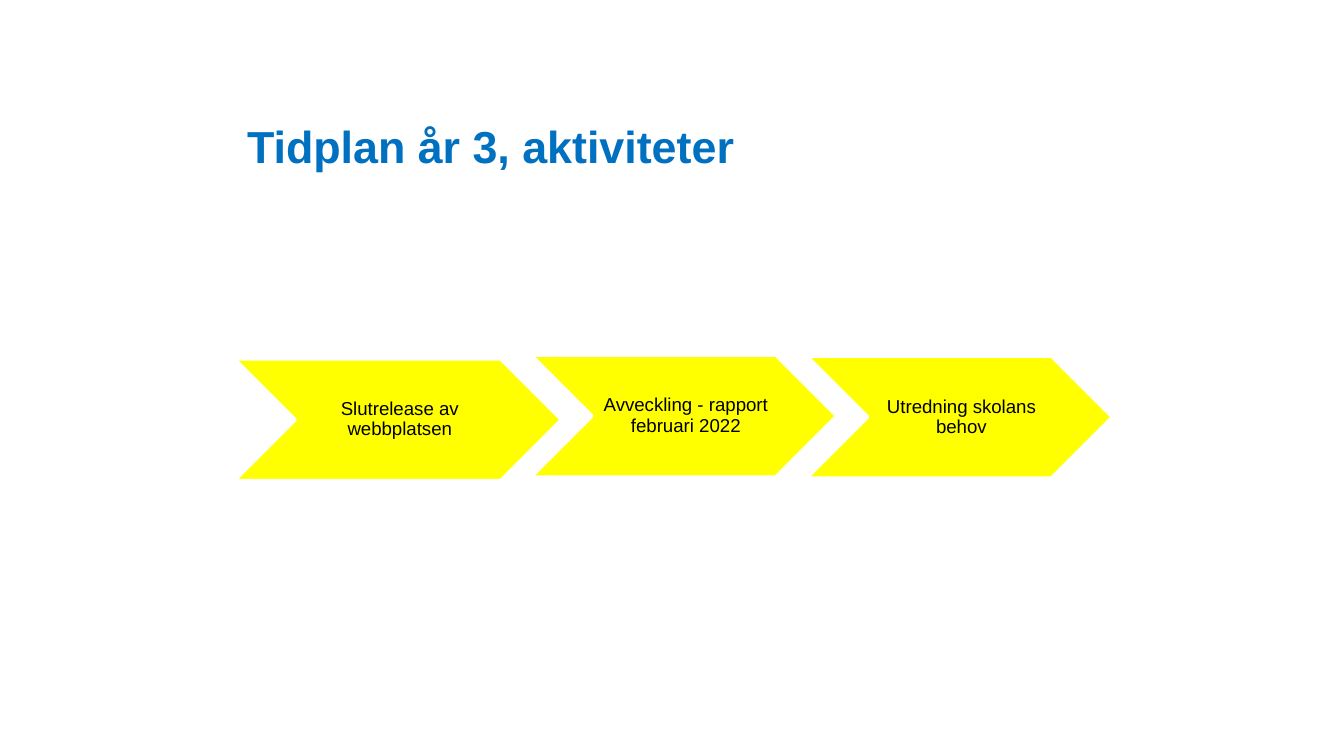
"""Build the timeline slide for year three with its chevron activities."""
from dataclasses import dataclass
from typing import Any

from pptx import Presentation
from pptx.dml.color import RGBColor
from pptx.enum.shapes import MSO_SHAPE
from pptx.enum.text import MSO_ANCHOR, PP_ALIGN
from pptx.util import Cm, Pt

CHEVRON = MSO_SHAPE.CHEVRON
MIDDLE, BOTTOM = MSO_ANCHOR.MIDDLE, MSO_ANCHOR.BOTTOM
CENTER, LEFT = PP_ALIGN.CENTER, PP_ALIGN.LEFT

COLOURS = {"title": "0070C0", "activity": "FFFF00", "outline": "FFFFFF", "text": "000000"}
ROW_HEIGHT = Cm(2.31)
TITLE_FONT = {"name": "Arial", "size": Pt(24), "bold": True}
ACTIVITY_FONT = {"name": "Arial", "size": Pt(10), "bold": False}
TITLE_FRAME = {"word_wrap": True, "vertical_anchor": BOTTOM}
ACTIVITY_FRAME = {
    "word_wrap": True,
    "vertical_anchor": MIDDLE,
    "margin_left": Cm(0.1),
    "margin_top": Cm(0.03),
    "margin_right": Cm(0.03),
    "margin_bottom": Cm(0.03),
}
TITLE_PARAGRAPH = {"alignment": LEFT}
ACTIVITY_PARAGRAPH = {"alignment": CENTER, "line_spacing": 0.9}


@dataclass(frozen=True)
class Activity:
    """A chevron step, with lengths in centimetres."""

    text: str
    left: float
    top: float
    width: float


ACTIVITIES = (
    Activity("Slutrelease av webbplatsen", 4.42, 6.78, 6.2),
    Activity("Avveckling - rapport februari 2022", 10.03, 6.71, 5.79),
    Activity("Utredning skolans behov", 15.24, 6.73, 5.79),
)


def colour(name: str) -> RGBColor:
    """Return the named colour."""
    return RGBColor.from_string(COLOURS[name])


def apply_format(target: Any, values: dict[str, Any]) -> None:
    """Set every format value on the target."""
    for name, value in values.items():
        setattr(target, name, value)


def write_text(shape: Any, text: str, colour_name: str, frame: dict[str, Any],
               layout: dict[str, Any], font: dict[str, Any]) -> None:
    """Write one formatted paragraph in the shape."""
    apply_format(shape.text_frame, frame)
    paragraph = shape.text_frame.paragraphs[0]
    paragraph.text = text
    apply_format(paragraph, layout)
    apply_format(paragraph.font, font)
    paragraph.font.color.rgb = colour(colour_name)


def draw_title(slide: Any, text: str) -> None:
    """Draw the slide title."""
    shape = slide.shapes.add_textbox(Cm(4.42), Cm(1.07), Cm(16.61), ROW_HEIGHT)
    write_text(shape, text, "title", TITLE_FRAME, TITLE_PARAGRAPH, TITLE_FONT)


def draw_activity(slide: Any, activity: Activity) -> None:
    """Draw one activity as a labelled chevron."""
    shape = slide.shapes.add_shape(
        CHEVRON, Cm(activity.left), Cm(activity.top), Cm(activity.width), ROW_HEIGHT)
    shape.shadow.inherit = False
    shape.fill.solid()
    shape.fill.fore_color.rgb = colour("activity")
    shape.line.color.rgb = colour("outline")
    shape.line.width = Pt(2)
    write_text(shape, activity.text, "text", ACTIVITY_FRAME, ACTIVITY_PARAGRAPH, ACTIVITY_FONT)


def main() -> None:
    """Build and save the presentation."""
    presentation = Presentation()
    presentation.slide_width = Cm(25.4)
    presentation.slide_height = Cm(14.29)
    slide = presentation.slides.add_slide(presentation.slide_layouts[6])
    draw_title(slide, "Tidplan år 3, aktiviteter")
    for activity in ACTIVITIES:
        draw_activity(slide, activity)
    presentation.save("out.pptx")


if __name__ == "__main__":
    main()
